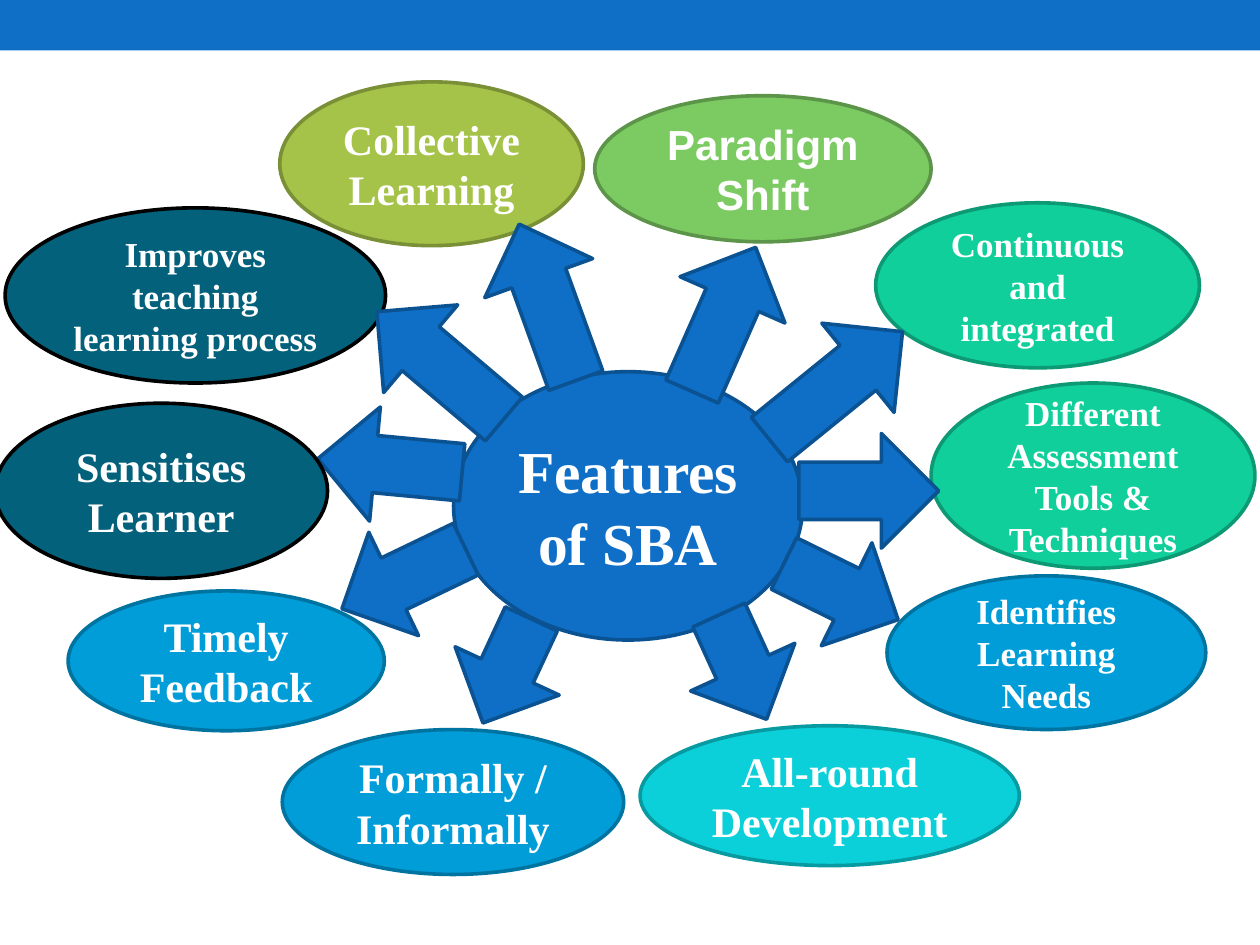
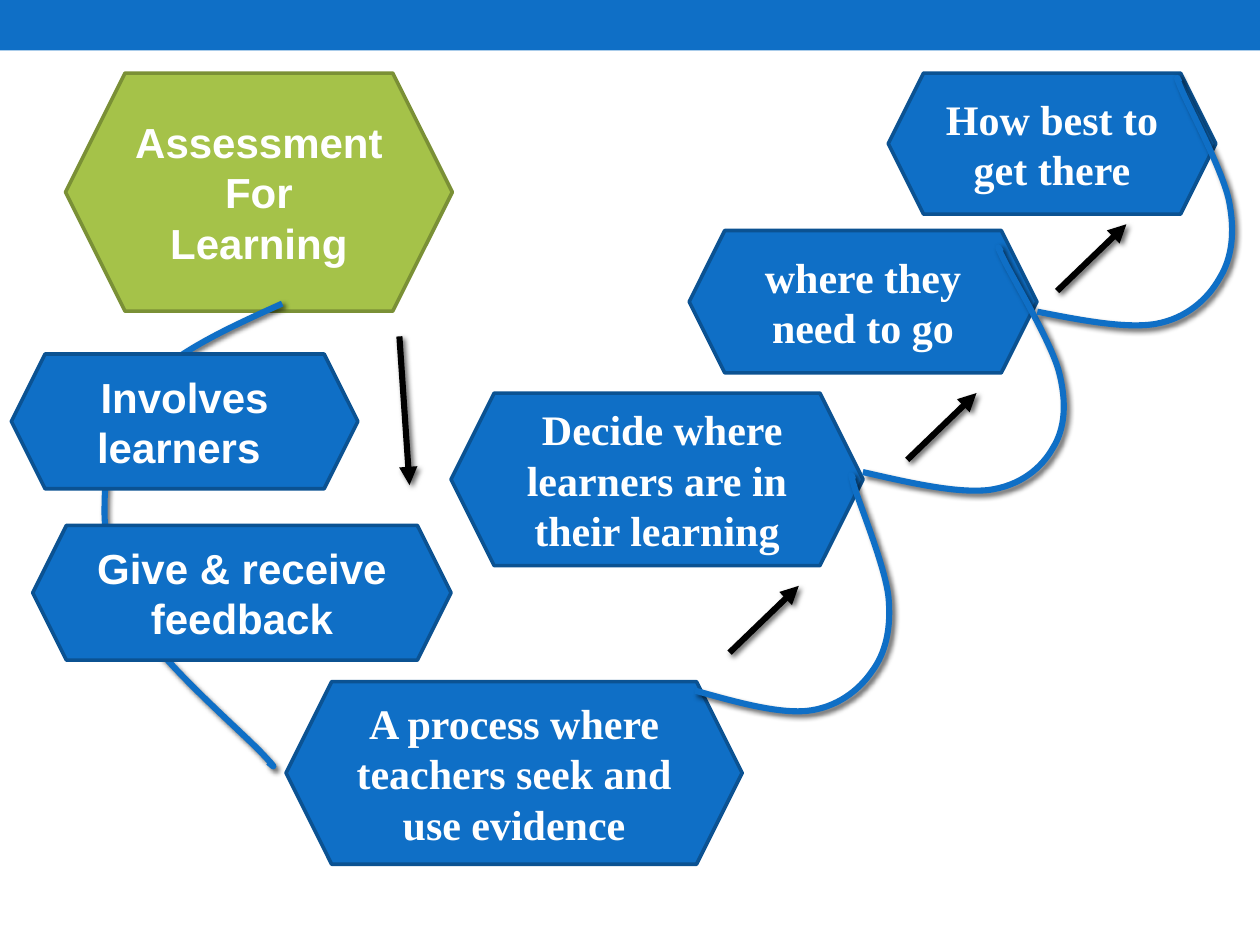
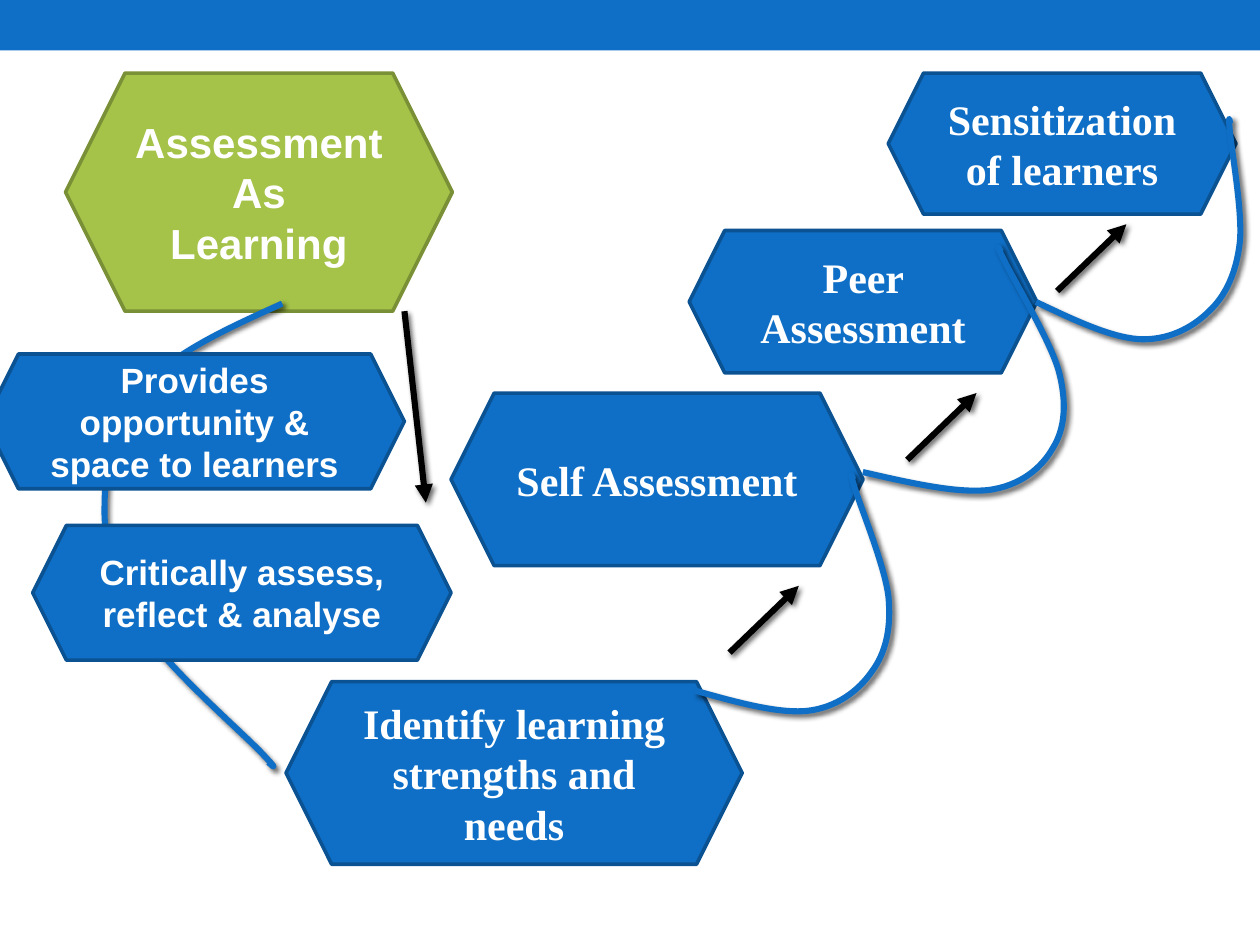
from dataclasses import dataclass

from lxml.etree import Element, SubElement
from pptx import Presentation
from pptx.dml.color import RGBColor
from pptx.enum.shapes import MSO_CONNECTOR, MSO_SHAPE
from pptx.enum.text import MSO_ANCHOR, PP_ALIGN
from pptx.oxml.ns import qn
from pptx.util import Inches, Pt

# Shared look
WHITE, BLACK = "FFFFFF", "000000"
SERIF, SANS = "Times New Roman", "Arial"
BLUE = ("0F6FC6", "0B5292")  # fill and outline
OLIVE = ("A5C249", "7A9036")
GREEN = ("7CCA62", "5C9549")
MINT = ("10CF9B", "0C9973")
SKY = ("009DD9", "0074A1")
AQUA = ("0BD0D9", "089AA1")
TEAL = ("04617B", BLACK)
OUTLINE, STROKE = 2.08, 3.5

Point = tuple[float, float]


@dataclass
class Label:
    """A filled shape with centred bold text; a newline starts a paragraph."""
    text: str
    left: float
    top: float
    width: float
    height: float
    colors: tuple[str, str] = BLUE
    size: int = 24
    font: str = SERIF


@dataclass
class Spoke:
    """A block arrow pointing away from the hub."""
    left: float
    top: float
    height: float
    angle: float
    width: float = 0.91


@dataclass
class Arrow:
    start: Point
    end: Point


@dataclass
class Swoosh:
    """The frame and rotation of one linking curve."""
    left: float
    top: float
    width: float
    height: float
    angle: float = 0


@dataclass
class Staircase:
    """The parts of one assessment page, from back to front."""
    steps: list[Label]
    swooshes: list[Swoosh]
    arrows: list[Arrow]
    side_notes: list[Label]


# Features page
HUB = Label("Features of SBA", 3.6, 2.95, 2.77, 2.13, size=34)
BACK_OVALS = [
    Label("All-round Development", 5.08, 5.76, 3.01, 1.11, AQUA),
    Label("Paradigm Shift", 4.72, 0.76, 2.67, 1.16, GREEN, font=SANS),
    Label("Continuous and integrated", 6.95, 1.61, 2.57, 1.31, MINT, 20),
    HUB,
    Label("Formally / Informally", 2.24, 5.79, 2.71, 1.15, SKY),
    Label("Improves teaching learning process", 0.04, 1.65, 3.02, 1.39, TEAL, 20),
    Label("Collective Learning", 2.22, 0.65, 2.41, 1.3, OLIVE),
    Label("Timely Feedback", 0.54, 4.69, 2.51, 1.11, SKY),
    Label("Different Assessment Tools & Techniques", 7.39, 3.04, 2.57, 1.47, MINT, 20),
]
SPOKES = [
    Spoke(3.57, 4.87, 0.91, 24.9),
    Spoke(5.44, 4.84, 0.91, 335.4),
    Spoke(6.22, 4.19, 1.01, 296.2),
    Spoke(5.29, 1.91, 1.25, 203.8),
    Spoke(3.89, 1.74, 1.32, 160.1),
    Spoke(6.18, 2.38, 1.36, 231),
    Spoke(2.75, 4.05, 1.09, 64.3),
    Spoke(2.64, 3.12, 1.15, 95.4),
    Spoke(3.04, 2.24, 1.32, 130.2),
    Spoke(6.44, 3.34, 1.11, 270),
]
FRONT_OVALS = [
    Label("Identifies Learning Needs", 7.04, 4.57, 2.53, 1.22, SKY, 20),
    Label("Sensitises Learner", -0.04, 3.2, 2.64, 1.39, TEAL),
]

# One curve, in units of its own grid, serves every link
GRID_WIDTH, GRID_HEIGHT = 141, 367
CURVE_START = (141, 0)
CURVE_SEGMENTS = [  # two control points and an end point each
    ((99, 19), (57, 38), (33, 64)),
    ((9, 91), (0, 128), (0, 160)),
    ((-1, 192), (9, 225), (30, 258)),
    ((51, 290), (109, 340), (125, 357)),
    ((142, 375), (130, 364), (130, 364)),
]
SHARED_SWOOSHES = [
    Swoosh(0.83, 2.41, 1.41, 3.67),
    Swoosh(6.02, 3.86, 1.07, 2.11, 214.5),
    Swoosh(7.28, 2.1, 1.22, 2.08, 209.4),
]
STEP_ARROWS = [Arrow((x, y), (x + 0.55, y - 0.53))
               for x, y in [(5.79, 5.18), (7.2, 3.65), (8.39, 2.31)]]


def staircase_steps(title: str, texts: list[str], top_width: float) -> list[Label]:
    """The title hexagon and the four steps, lowest first."""
    places = [(2.27, 5.41, 3.62, 1.45), (3.58, 3.12, 3.27, 1.37),
              (5.47, 1.83, 2.76, 1.13), (7.05, 0.58, top_width, 1.12)]
    heading = Label(title, 0.52, 0.58, 3.07, 1.89, OLIVE, font=SANS)
    return [heading] + [Label(text, *place) for text, place in zip(texts, places)]


STAIRCASES = [
    Staircase(
        staircase_steps("Assessment For\nLearning", [
            "A process where teachers seek and use evidence",
            " Decide where learners are in their learning",
            "where they need to go",
            "How best to get there"], 2.6),
        SHARED_SWOOSHES + [Swoosh(8.69, 0.73, 1.13, 2.16, 209.4)],
        [Arrow((3.17, 2.67), (3.25, 3.85))] + STEP_ARROWS,
        [Label("Involves learners ", 0.09, 2.81, 2.75, 1.07, font=SANS),
         Label("Give & receive feedback", 0.26, 4.17, 3.32, 1.07, font=SANS)]),
    Staircase(
        staircase_steps("Assessment As\nLearning", [
            "Identify learning strengths and needs",
            "Self Assessment",
            "Peer Assessment",
            "Sensitization of learners"], 2.76),
        SHARED_SWOOSHES + [Swoosh(8.82, 0.96, 1.02, 2.11, 225.2)],
        [Arrow((3.21, 2.47), (3.38, 3.99))] + STEP_ARROWS,
        [Label("Provides opportunity & space to learners",
               -0.12, 2.81, 3.33, 1.07, size=20, font=SANS),
         Label("Critically assess, reflect & analyse",
               0.26, 4.17, 3.32, 1.07, size=20, font=SANS)]),
]


def color(value: str) -> RGBColor:
    return RGBColor.from_string(value)


def add_filled(page, kind, left: float, top: float, width: float, height: float,
               colors: tuple[str, str]):
    """Add a flat preset shape with a fill and an outline."""
    shape = page.shapes.add_shape(kind, Inches(left), Inches(top),
                                  Inches(width), Inches(height))
    shape.shadow.inherit = False
    shape.fill.solid()
    shape.fill.fore_color.rgb = color(colors[0])
    shape.line.color.rgb = color(colors[1])
    shape.line.width = Pt(OUTLINE)
    return shape


def add_label(page, kind, label: Label) -> None:
    box = add_filled(page, kind, label.left, label.top, label.width,
                     label.height, label.colors)
    frame = box.text_frame
    frame.word_wrap = True
    frame.vertical_anchor = MSO_ANCHOR.MIDDLE
    frame.text = label.text
    for para in frame.paragraphs:
        para.alignment = PP_ALIGN.CENTER
        for span in para.runs:
            span.font.name = label.font
            span.font.size = Pt(label.size)
            span.font.bold = True
            span.font.color.rgb = color(WHITE)


def add_spoke(page, spoke: Spoke) -> None:
    shape = add_filled(page, MSO_SHAPE.DOWN_ARROW, spoke.left, spoke.top,
                       spoke.width, spoke.height, BLUE)
    shape.rotation = spoke.angle


def style_stroke(shape, stroke: str) -> None:
    """Give a curve or connector its thick line and soft shadow."""
    shape.line.color.rgb = color(stroke)
    shape.line.width = Pt(STROKE)
    effects = SubElement(shape._element.spPr, qn("a:effectLst"))
    shadow = SubElement(effects, qn("a:outerShdw"), blurRad=str(Pt(3)),
                        dist=str(Pt(2)), dir="2700000", rotWithShape="0")
    tint = SubElement(shadow, qn("a:srgbClr"), val=BLACK)
    SubElement(tint, qn("a:alpha"), val="60000")


def add_arrow(page, arrow: Arrow) -> None:
    ends = [Inches(value) for value in arrow.start + arrow.end]
    connector = page.shapes.add_connector(MSO_CONNECTOR.STRAIGHT, *ends)
    style_stroke(connector, BLACK)
    SubElement(connector.line._get_or_add_ln(), qn("a:tailEnd"), type="triangle")


def add_swoosh(page, swoosh: Swoosh) -> None:
    """Draw the linking curve, fitted to its frame and then turned."""
    scale = (Inches(swoosh.width) / GRID_WIDTH, Inches(swoosh.height) / GRID_HEIGHT)
    ends = [segment[-1] for segment in CURVE_SEGMENTS]
    builder = page.shapes.build_freeform(*CURVE_START, scale=scale)
    builder.add_line_segments(ends + [ends[-1]] * 2, close=False)
    shape = builder.convert_to_shape(Inches(swoosh.left), Inches(swoosh.top))
    # Bend the straight segments and let the grid fill the frame
    outline = next(shape._element.iter(qn("a:path")))
    outline.set("h", str(GRID_HEIGHT))
    shape.height = Inches(swoosh.height)
    for straight, segment in zip(outline.findall(qn("a:lnTo")), CURVE_SEGMENTS):
        bend = Element(qn("a:cubicBezTo"))
        for x, y in segment:
            SubElement(bend, qn("a:pt"), x=str(x), y=str(y))
        outline.replace(straight, bend)
    shape.rotation = swoosh.angle
    shape.fill.background()
    style_stroke(shape, BLUE[0])


def add_page(deck):
    """Add a blank page with the band across its top."""
    page = deck.slides.add_slide(deck.slide_layouts[6])
    band = add_filled(page, MSO_SHAPE.RECTANGLE, 0, 0, 10, 0.4, BLUE)
    band.line.fill.background()
    return page


def build_features(deck) -> None:
    page = add_page(deck)
    for oval in BACK_OVALS:
        add_label(page, MSO_SHAPE.OVAL, oval)
    for spoke in SPOKES:
        add_spoke(page, spoke)
    for oval in FRONT_OVALS:
        add_label(page, MSO_SHAPE.OVAL, oval)


def build_staircase(deck, staircase: Staircase) -> None:
    page = add_page(deck)
    for step in staircase.steps:
        add_label(page, MSO_SHAPE.HEXAGON, step)
    for swoosh in staircase.swooshes:
        add_swoosh(page, swoosh)
    for arrow in staircase.arrows:
        add_arrow(page, arrow)
    for note in staircase.side_notes:
        add_label(page, MSO_SHAPE.HEXAGON, note)


def main() -> None:
    deck = Presentation()
    deck.slide_width, deck.slide_height = Inches(10), Inches(7.5)
    build_features(deck)
    for staircase in STAIRCASES:
        build_staircase(deck, staircase)
    deck.save("out.pptx")


if __name__ == "__main__":
    main()
